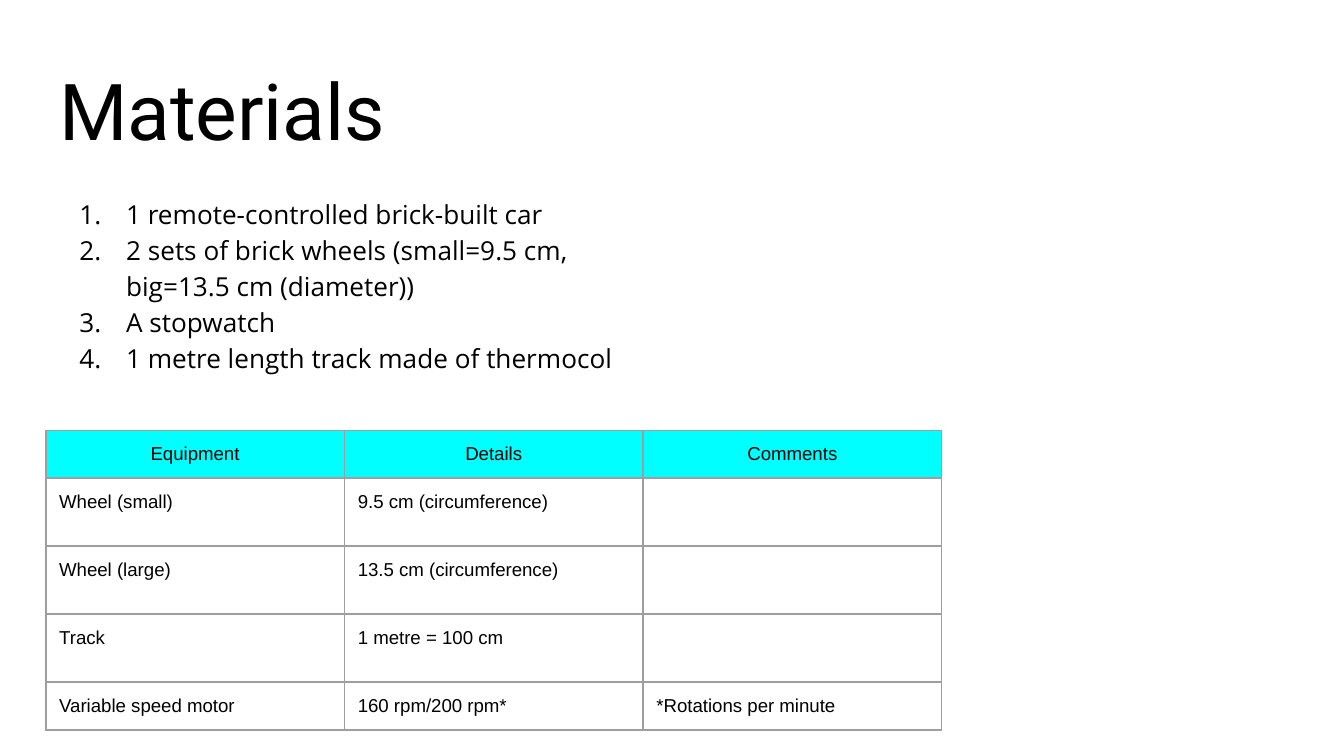
"""Build the Materials slide: a numbered list above an equipment table."""
from dataclasses import dataclass

from lxml.etree import SubElement
from pptx import Presentation
from pptx.dml.color import RGBColor as RGB
from pptx.enum.text import MSO_ANCHOR as Anchor, MSO_AUTO_SIZE as AutoSize, PP_ALIGN as Align
from pptx.oxml.ns import qn
from pptx.util import Pt

TITLE = "Materials"
MATERIALS = [
    "1 remote-controlled brick-built car",
    "2 sets of brick wheels (small=9.5 cm, big=13.5 cm (diameter))",
    "A stopwatch",
    "1 metre length track made of thermocol",
]
EQUIPMENT = [
    ("Equipment", "Details", "Comments"),
    ("Wheel (small)", "9.5 cm (circumference)", ""),
    ("Wheel (large)", "13.5 cm (circumference)", ""),
    ("Track", "1 metre = 100 cm", ""),
    ("Variable speed motor", "160 rpm/200 rpm*", "*Rotations per minute"),
]


@dataclass(frozen=True)
class Theme:
    ink: RGB = RGB(0, 0, 0)
    header: RGB = RGB(0, 255, 255)
    border: str = "9E9E9E"
    title: tuple = ("Roboto", 42)
    body: tuple = ("Open Sans", 14)
    table: tuple = ("Arial", 10)


THEME = Theme()
LEFT, INSET = 24.5, 7.2
COLUMN_WIDTH, FULL_ROW, ROW_WITH_GAP = 160, 25, 34


def add_run(paragraph, words, style):
    run = paragraph.add_run()
    run.text = words
    run.font.name, run.font.size = style[0], Pt(style[1])
    run.font.color.rgb = THEME.ink


def set_insets(target):
    target.margin_left = target.margin_right = Pt(INSET)
    target.margin_top = target.margin_bottom = Pt(INSET)


def prepare_frame(frame, anchor):
    set_insets(frame)
    frame.word_wrap = True
    frame.auto_size = AutoSize.NONE
    frame.vertical_anchor = anchor


def number_paragraph(paragraph):
    paragraph.line_spacing = 1.15
    props = paragraph._p.get_or_add_pPr()
    props.set("marL", str(Pt(36)))
    props.set("indent", str(Pt(-25)))
    color = SubElement(props, qn("a:buClr"))
    SubElement(color, qn("a:srgbClr"), val=str(THEME.ink))
    SubElement(props, qn("a:buFont"), typeface=THEME.body[0])
    SubElement(props, qn("a:buAutoNum"), type="arabicPeriod")


def add_borders(cell):
    props = cell._tc.get_or_add_tcPr()
    for side in "LRTB":
        line = SubElement(props, qn(f"a:ln{side}"), w=str(Pt(1)))
        fill = SubElement(line, qn("a:solidFill"))
        SubElement(fill, qn("a:srgbClr"), val=THEME.border)


def add_title(slide):
    title = slide.shapes.title
    title.left, title.top, title.width, title.height = Pt(LEFT), Pt(25.2), Pt(671), Pt(65.5)
    prepare_frame(title.text_frame, Anchor.BOTTOM)
    heading = title.text_frame.paragraphs[0]
    heading.alignment = Align.LEFT
    add_run(heading, TITLE, THEME.title)


def add_materials(slide):
    frame = slide.shapes.add_textbox(Pt(LEFT), Pt(96.5), Pt(314.6), Pt(264)).text_frame
    prepare_frame(frame, Anchor.TOP)
    for index, material in enumerate(MATERIALS):
        paragraph = frame.add_paragraph() if index else frame.paragraphs[0]
        number_paragraph(paragraph)
        add_run(paragraph, material, THEME.body)


def add_equipment(slide):
    heights = [FULL_ROW if all(row) else ROW_WITH_GAP for row in EQUIPMENT]
    columns = len(EQUIPMENT[0])
    table = slide.shapes.add_table(
        len(EQUIPMENT), columns, Pt(LEFT), Pt(230.6),
        Pt(columns * COLUMN_WIDTH), Pt(sum(heights))).table
    table.first_row = table.horz_banding = False
    for column in table.columns:
        column.width = Pt(COLUMN_WIDTH)
    for row_index, entries in enumerate(EQUIPMENT):
        table.rows[row_index].height = Pt(heights[row_index])
        for column_index, entry in enumerate(entries):
            cell = table.cell(row_index, column_index)
            set_insets(cell)
            add_borders(cell)
            paragraph = cell.text_frame.paragraphs[0]
            if row_index == 0:
                cell.fill.solid()
                cell.fill.fore_color.rgb = THEME.header
                paragraph.alignment = Align.CENTER
            else:
                cell.fill.background()
            if entry:
                add_run(paragraph, entry, THEME.table)


def main():
    deck = Presentation()
    deck.slide_width, deck.slide_height = Pt(720), Pt(405)
    slide = deck.slides.add_slide(deck.slide_layouts[5])
    add_title(slide)
    add_materials(slide)
    add_equipment(slide)
    deck.save("out.pptx")


if __name__ == "__main__":
    main()
